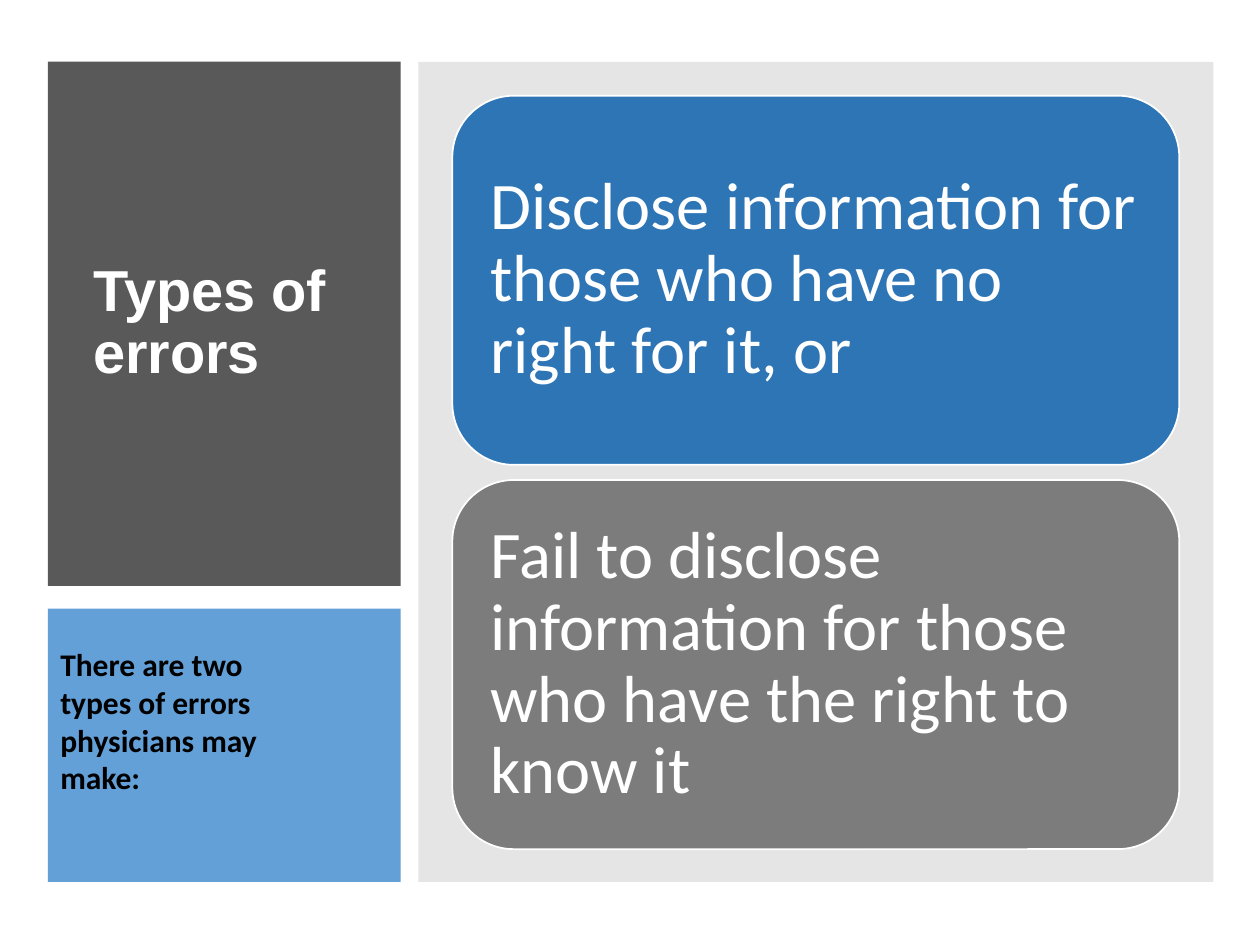
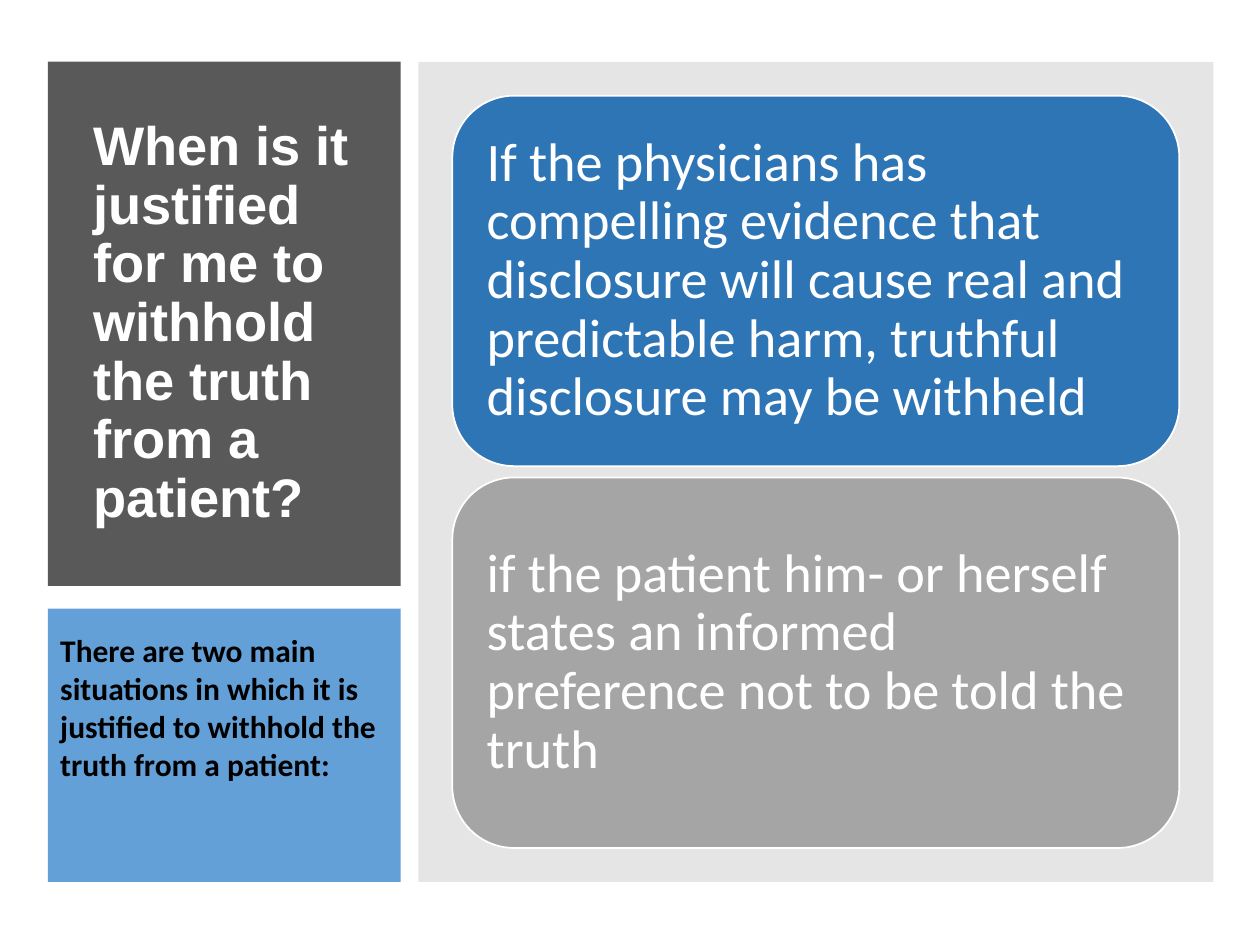
"""Build two slides on truth-telling: a titled side column beside a pair of cards."""
from dataclasses import dataclass

from lxml.etree import SubElement
from pptx import Presentation
from pptx.dml.color import RGBColor
from pptx.enum.shapes import MSO_SHAPE
from pptx.enum.text import MSO_ANCHOR, MSO_AUTO_SIZE, PP_ALIGN
from pptx.oxml.ns import qn
from pptx.util import Inches, Pt

WHITE, BLACK = "FFFFFF", "000000"
DARK, SKY, GREY, BLUE = "595959", "5B9BD5", "808080", "2E75B6"
CARD_LEFT, CARD_TOP, CARD_WIDTH = 3.59, 0.76, 5.77


@dataclass(frozen=True)
class Box:
    left: float
    top: float
    width: float
    height: float

    def emu(self) -> tuple:
        return tuple(Inches(v) for v in (self.left, self.top, self.width, self.height))


@dataclass(frozen=True)
class Panel:
    box: Box
    fill: str
    opacity: int = 100


@dataclass(frozen=True)
class Type:
    font: str
    size: float
    color: str
    bold: bool = False
    spacing: float = 1.0


@dataclass(frozen=True)
class Card:
    text: str
    fill: str


@dataclass(frozen=True)
class Topic:
    title: str
    title_size: int
    note: str
    note_box: Box
    cards: tuple
    card_size: int
    card_height: float
    card_pitch: float
    card_inset: float


TITLE_BOX = Box(0.64, 0.8, 2.33, 3.54)
PANELS = (
    Panel(Box(0.38, 0.49, 2.8, 4.16), DARK),
    Panel(Box(0.38, 4.83, 2.8, 2.17), SKY, 95),
    Panel(Box(3.32, 0.49, 6.31, 6.51), GREY, 20),
)
TOPICS = (
    Topic(
        "Types of errors", 33,
        "There are two types of errors physicians may make:",
        Box(0.38, 5.07, 1.79, 1.31),
        (
            Card("Disclose information for those who have no right for it, or", BLUE),
            Card("Fail to disclose information for those who have the right to know it",
                 "7C7C7C"),
        ),
        38, 2.93, 3.05, 0.16,
    ),
    Topic(
        "When is it justified for me to withhold the truth from a patient?", 31,
        "There are two main situations in which it is justified to withhold "
        "the truth from a patient:",
        Box(0.38, 4.96, 2.8, 1.31),
        (
            Card("If the physicians has compelling evidence that disclosure will cause "
                 "real and predictable harm, truthful disclosure may be withheld", BLUE),
            Card("if the patient him- or herself states an informed preference "
                 "not to be told the truth", "A5A5A5"),
        ),
        31, 2.94, 3.03, 0.13,
    ),
)


def paint(color_owner, color: str) -> None:
    """Give a solid fill its colour."""
    color_owner.solid()
    color_owner.fore_color.rgb = RGBColor.from_string(color)


def write(shape, text: str, style: Type, **frame_format) -> None:
    """Set one left-aligned paragraph and the format of its frame."""
    frame = shape.text_frame
    frame.text = text
    for name, value in {"word_wrap": True, **frame_format}.items():
        setattr(frame, name, value)
    paragraph = frame.paragraphs[0]
    paragraph.alignment = PP_ALIGN.LEFT
    paragraph.line_spacing = style.spacing
    font = paragraph.runs[0].font
    for name, value in {"name": style.font, "size": Pt(style.size),
                        "bold": style.bold}.items():
        setattr(font, name, value)
    paint(font.fill, style.color)


def add_block(slide, kind: MSO_SHAPE, box: Box, fill: str):
    """Add a filled shape without shadow."""
    block = slide.shapes.add_shape(kind, *box.emu())
    block.shadow.inherit = False
    paint(block.fill, fill)
    return block


def add_panel(slide, panel: Panel) -> None:
    """Add a borderless background panel."""
    block = add_block(slide, MSO_SHAPE.RECTANGLE, panel.box, panel.fill)
    block.line.fill.background()
    if panel.opacity < 100:
        color = block.element.spPr.find(f"{qn('a:solidFill')}/{qn('a:srgbClr')}")
        SubElement(color, qn("a:alpha"), val=str(panel.opacity * 1000))


def add_title(slide, topic: Topic) -> None:
    """Place the title placeholder in front of the dark panel."""
    title = slide.shapes.title
    title.left, title.top, title.width, title.height = TITLE_BOX.emu()
    write(title, topic.title, Type("Arial", topic.title_size, WHITE, True, 0.9),
          vertical_anchor=MSO_ANCHOR.MIDDLE, auto_size=MSO_AUTO_SIZE.NONE)
    title.element.getparent().append(title.element)


def add_cards(slide, topic: Topic) -> None:
    """Stack the rounded cards at an even pitch."""
    inset = Inches(topic.card_inset)
    margins = {f"margin_{side}": inset for side in ("left", "top", "right", "bottom")}
    for row, card in enumerate(topic.cards):
        box = Box(CARD_LEFT, CARD_TOP + row * topic.card_pitch,
                  CARD_WIDTH, topic.card_height)
        block = add_block(slide, MSO_SHAPE.ROUNDED_RECTANGLE, box, card.fill)
        paint(block.line.fill, WHITE)
        block.line.width = Pt(1)
        write(block, card.text, Type("Calibri", topic.card_size, WHITE, spacing=0.9),
              vertical_anchor=MSO_ANCHOR.MIDDLE, **margins)


def add_topic(deck, topic: Topic) -> None:
    """Build one slide from its topic."""
    slide = deck.slides.add_slide(deck.slide_layouts.get_by_name("Title Only"))
    for panel in PANELS:
        add_panel(slide, panel)
    add_title(slide, topic)
    add_cards(slide, topic)
    note = slide.shapes.add_textbox(*topic.note_box.emu())
    write(note, topic.note, Type("Calibri", 18, BLACK, True),
          auto_size=MSO_AUTO_SIZE.SHAPE_TO_FIT_TEXT)


def main() -> None:
    """Create and save the deck."""
    deck = Presentation()
    deck.slide_width, deck.slide_height = Inches(10), Inches(7.5)
    for topic in TOPICS:
        add_topic(deck, topic)
    deck.save("out.pptx")


if __name__ == "__main__":
    main()
